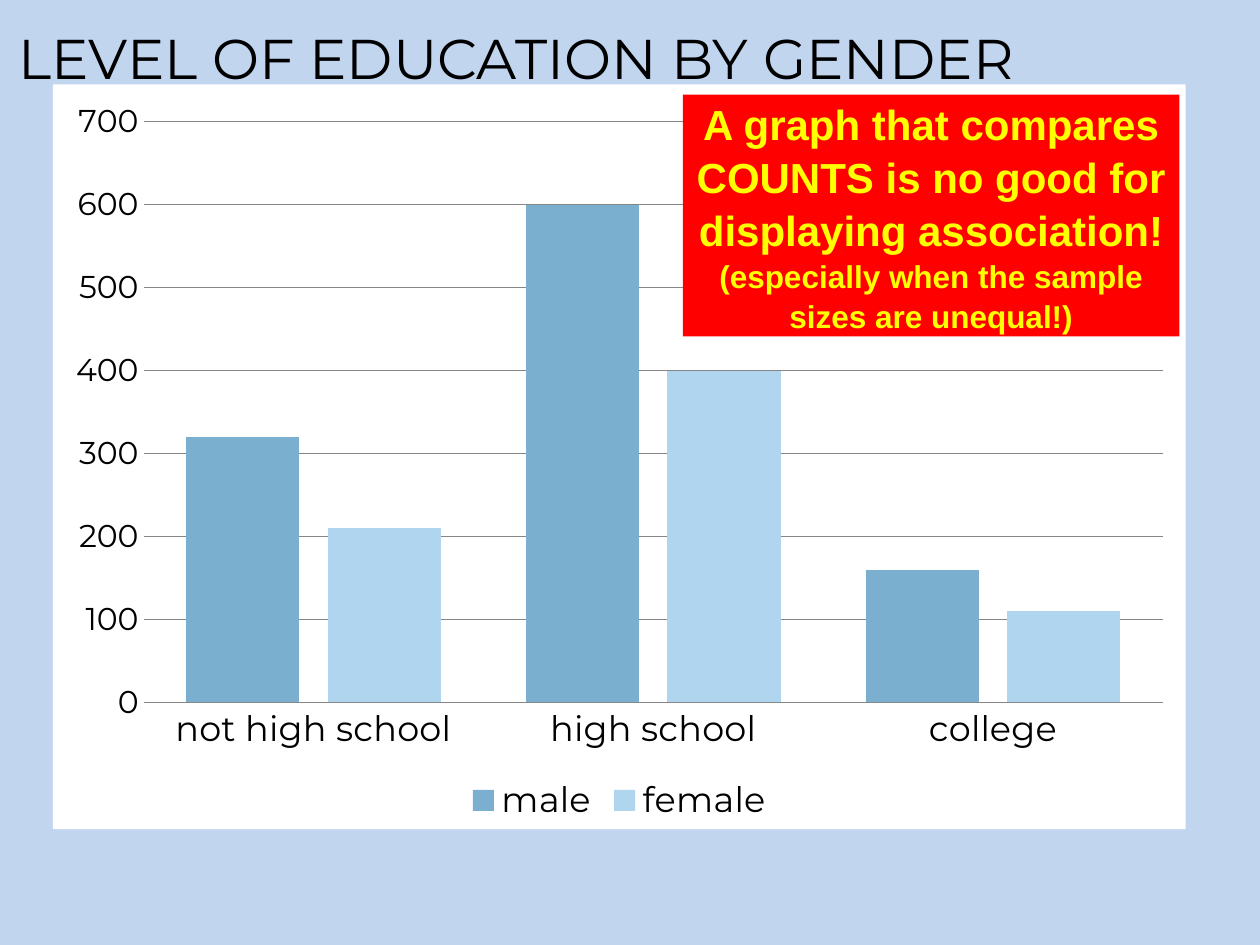
from pptx import Presentation
from pptx.chart.data import CategoryChartData
from pptx.dml.color import RGBColor
from pptx.enum.chart import XL_CHART_TYPE, XL_LEGEND_POSITION, XL_TICK_MARK
from pptx.enum.shapes import MSO_SHAPE
from pptx.enum.text import MSO_ANCHOR, PP_ALIGN
from pptx.oxml import parse_xml
from pptx.oxml.ns import nsdecls
from pptx.util import Pt

TITLE = "LEVEL OF EDUCATION BY GENDER"
LEVELS = ["not high school", "high school", "college"]
COUNTS = {"male": [320, 600, 160], "female": [210, 400, 110]}
WARNING = [
    ("A graph that compares COUNTS is no good for displaying association! ", 24),
    ("(especially when the sample sizes are unequal!)", 18),
]
COLORS = {
    "background": "C1D5EF", "text": "000000", "panel": "FFFFFF", "grid": "868686",
    "male": "7BAFD0", "female": "B0D5EF", "warning": "FF0000", "warning_text": "FFFF00",
}
PLOT = {"x": 0.08, "y": 0.05, "w": 0.9, "h": 0.78}
TITLE_BOX = (3.6, 5.76, 653.76, 54)
CHART_BOX = (30.24, 48.24, 647.28, 425.52)
WARNING_BOX = (390.24, 54, 283.68, 138.24)


def points(box):
    return [Pt(length) for length in box]


def paint(fill, name):
    fill.solid()
    fill.fore_color.rgb = RGBColor.from_string(COLORS[name])


def set_all(target, values):
    for key, value in values.items():
        setattr(target, key, value)


def style_font(font, size, name="Montserrat", color="text", bold=False):
    set_all(font, {"size": Pt(size), "name": name, "bold": bold})
    font.color.rgb = RGBColor.from_string(COLORS[color])


def add_title(slide):
    title = slide.shapes.title
    set_all(title, dict(zip(("left", "top", "width", "height"), points(TITLE_BOX))))
    title.text_frame.text = TITLE
    set_all(title.text_frame, {"vertical_anchor": MSO_ANCHOR.MIDDLE, "word_wrap": True})
    heading = title.text_frame.paragraphs[0]
    heading.alignment = PP_ALIGN.LEFT
    style_font(heading.runs[0].font, 32)


def add_counts(slide):
    data = CategoryChartData()
    data.categories = LEVELS
    for gender, counts in COUNTS.items():
        data.add_series(gender, counts)
    chart = slide.shapes.add_chart(
        XL_CHART_TYPE.COLUMN_CLUSTERED, *points(CHART_BOX), data).chart
    set_all(chart, {"has_title": False, "has_legend": True})
    style_font(chart.font, 10, "Arial")
    set_all(chart.legend, {"position": XL_LEGEND_POSITION.BOTTOM, "include_in_layout": False})
    style_font(chart.legend.font, 20)

    bars = chart.plots[0]
    set_all(bars, {"gap_width": 75, "overlap": -25, "vary_by_categories": False})
    for series in bars.series:
        paint(series.format.fill, series.name)

    no_ticks = {"major_tick_mark": XL_TICK_MARK.NONE, "minor_tick_mark": XL_TICK_MARK.NONE}
    for axis, size in ((chart.category_axis, 20), (chart.value_axis, 18)):
        set_all(axis, no_ticks)
        style_font(axis.tick_labels.font, size)
    set_all(chart.value_axis, {"minimum_scale": 0, "maximum_scale": 700, "major_unit": 100,
                               "has_major_gridlines": True})
    chart.value_axis.format.line.fill.background()
    for line in (chart.category_axis.format.line, chart.value_axis.major_gridlines.format.line):
        line.width = Pt(0.75)
        paint(line.fill, "grid")

    place = "".join(f'<c:{side}Mode val="edge"/>' for side in "xy")
    place += "".join(f'<c:{side} val="{share}"/>' for side, share in PLOT.items())
    plot_area = chart._chartSpace.chart.plotArea
    for layout in plot_area.findall("{*}layout"):
        plot_area.remove(layout)
    plot_area.insert(0, parse_xml(
        f'<c:layout {nsdecls("c")}><c:manualLayout><c:layoutTarget val="inner"/>'
        f'{place}</c:manualLayout></c:layout>'))
    panel = parse_xml(
        f'<c:spPr {nsdecls("c", "a")}><a:solidFill><a:srgbClr val="{COLORS["panel"]}"/>'
        '</a:solidFill><a:ln><a:noFill/></a:ln></c:spPr>')
    chart._chartSpace.chart.addnext(panel)


def add_warning(slide):
    warning = slide.shapes.add_shape(MSO_SHAPE.RECTANGLE, *points(WARNING_BOX))
    warning.shadow.inherit = False
    paint(warning.fill, "warning")
    warning.line.fill.background()
    set_all(warning.text_frame, {"word_wrap": True, "vertical_anchor": MSO_ANCHOR.MIDDLE})
    message = warning.text_frame.paragraphs[0]
    set_all(message, {"alignment": PP_ALIGN.CENTER, "line_spacing": 1.05})
    for words, size in WARNING:
        run = message.add_run()
        run.text = words
        style_font(run.font, size, "Arial", "warning_text", True)


def main():
    deck = Presentation()
    set_all(deck, {"slide_width": Pt(720), "slide_height": Pt(540)})
    slide = deck.slides.add_slide(deck.slide_layouts[5])
    paint(slide.background.fill, "background")
    add_title(slide)
    add_counts(slide)
    add_warning(slide)
    deck.save("out.pptx")


if __name__ == "__main__":
    main()
